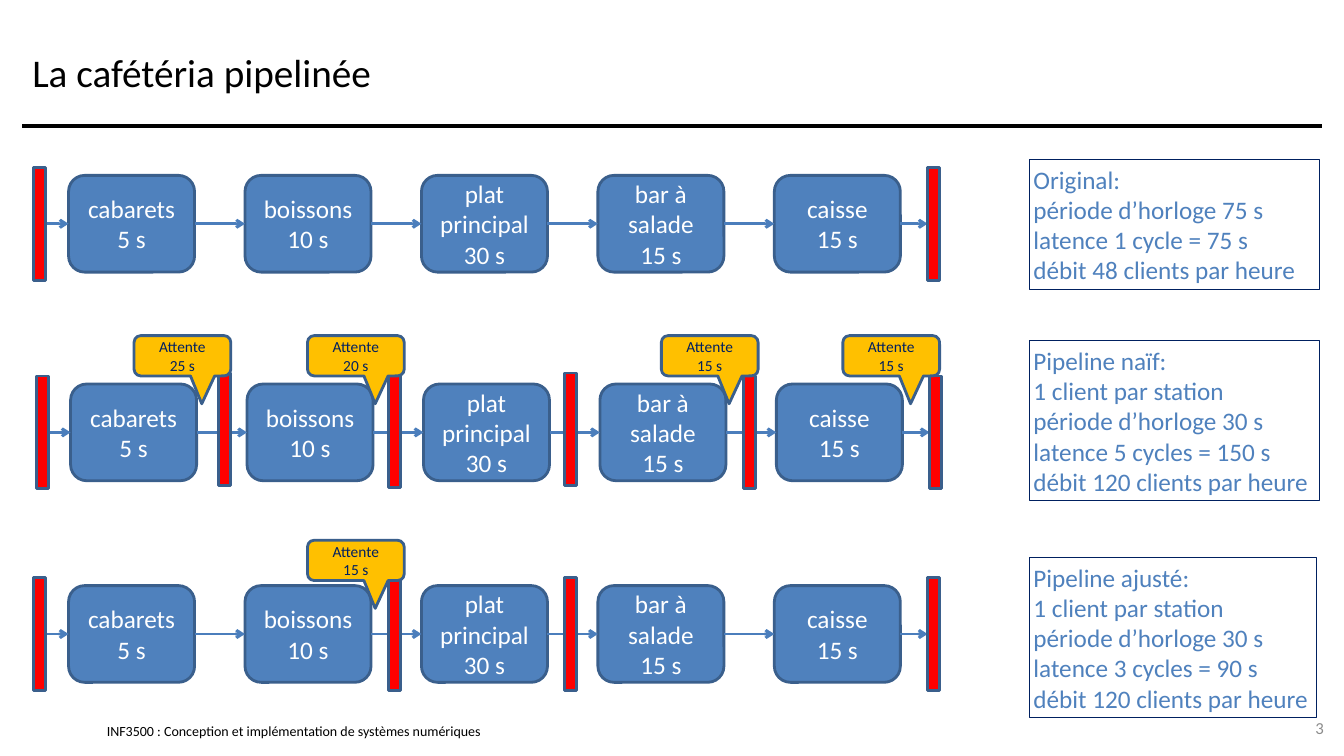
from dataclasses import dataclass

from lxml.etree import SubElement
from pptx import Presentation
from pptx.dml.color import RGBColor
from pptx.enum.shapes import MSO_CONNECTOR as Connector, MSO_SHAPE as Shape
from pptx.enum.text import MSO_ANCHOR as Anchor, PP_ALIGN as Align
from pptx.oxml.ns import qn
from pptx.util import Inches, Pt


@dataclass(frozen=True)
class Theme:
    font: str = "Calibri"
    black: str = "000000"
    white: str = "FFFFFF"
    blue: str = "4F81BD"
    outline: str = "3A5F8C"
    arrow: str = "4B7EBC"
    navy: str = "002060"
    red: str = "FF0000"
    amber: str = "FFC000"
    grey: str = "8C8C8C"
    title_size: int = 28
    body_size: int = 18
    number_size: int = 12
    wait_size: int = 11
    footer_size: int = 10
    line_width: float = 2


THEME = Theme()

STATIONS = [("cabarets", "5 s"), ("boissons", "10 s"), ("plat principal", "30 s"),
            ("bar à salade", "15 s"), ("caisse", "15 s")]
STATION_WIDTH, STATION_HEIGHT, STATION_PITCH = 1.25, 0.96, 1.75
REGISTER_WIDTH, REGISTER_HEIGHT = 0.12, 1.12
WAIT_WIDTH, WAIT_HEIGHT = 0.96, 0.4

# Registers (left, top) and waits (left, top, time) are offsets from the first station.
PIPELINES = [
    {"at": (0.68, 1.74),
     "registers": [(-0.35, -0.08), (8.52, -0.08)],
     "waits": [],
     "summary_at": (10.21, 1.58, 2.88, 1.29),
     "summary": ["Original:", "période d’horloge 75 s", "latence 1 cycle = 75 s",
                 "débit 48 clients par heure"]},
    {"at": (0.7, 3.81),
     "registers": [(-0.34, -0.08), (1.47, -0.11), (3.15, -0.09), (4.9, -0.11),
                   (6.67, -0.08), (8.52, -0.08)],
     "waits": [(0.63, -0.48, "25 s"), (2.35, -0.48, "20 s"), (5.86, -0.48, "15 s"),
               (7.66, -0.48, "15 s")],
     "summary_at": (10.21, 3.38, 2.88, 1.59),
     "summary": ["Pipeline naïf:", "1 client par station", "période d’horloge 30 s",
                 "latence 5 cycles = 150 s", "débit 120 clients par heure"]},
    {"at": (0.68, 5.81),
     "registers": [(-0.35, -0.08), (3.17, -0.08), (4.92, -0.08), (8.52, -0.08)],
     "waits": [(2.37, -0.45, "15 s")],
     "summary_at": (10.21, 5.53, 2.85, 1.59),
     "summary": ["Pipeline ajusté:", "1 client par station", "période d’horloge 30 s",
                 "latence 3 cycles = 90 s", "débit 120 clients par heure"]},
]


def write(shape, lines, size, color, align=Align.LEFT, inset=None):
    """Fill a shape with one paragraph per line, centred vertically."""
    frame = shape.text_frame
    frame.word_wrap = True
    frame.vertical_anchor = Anchor.MIDDLE
    if inset is not None:
        frame.margin_left = frame.margin_right = Inches(inset)
        frame.margin_top = frame.margin_bottom = Inches(inset)
    frame.text = "\n".join(lines)
    for paragraph in frame.paragraphs:
        paragraph.alignment = align
        paragraph.font.name = THEME.font
        paragraph.font.size = Pt(size)
        paragraph.font.color.rgb = RGBColor.from_string(color)


def add_box(slide, kind, box, fill=None, line=THEME.outline, width=THEME.line_width):
    shape = slide.shapes.add_shape(kind, *map(Inches, box))
    shape.shadow.inherit = False
    if fill:
        shape.fill.solid()
        shape.fill.fore_color.rgb = RGBColor.from_string(fill)
    else:
        shape.fill.background()
    shape.line.color.rgb = RGBColor.from_string(line)
    shape.line.width = Pt(width)
    return shape


def add_line(slide, start, end, y, color, width, arrow=False):
    """Draw a horizontal line, with an open arrowhead at its end if asked."""
    line = slide.shapes.add_connector(
        Connector.STRAIGHT, Inches(start), Inches(y), Inches(end), Inches(y))
    line.line.color.rgb = RGBColor.from_string(color)
    line.line.width = Pt(width)
    if arrow:
        SubElement(line.line._get_or_add_ln(), qn("a:tailEnd"), type="arrow")
    SubElement(line._element.spPr, qn("a:effectLst"))


def add_text(slide, box, text, size, color, align=Align.LEFT, inset=None):
    write(slide.shapes.add_textbox(*map(Inches, box)), [text], size, color, align, inset)


def add_frame(slide):
    """Place the title, its rule, the footer and the slide number."""
    add_text(slide, (1.06, 7.17, 5.11, 0.17),
             "INF3500 : Conception et implémentation de systèmes numériques",
             THEME.footer_size, THEME.black, inset=0)
    add_line(slide, 0.22, 13.11, 1.25, THEME.black, 3)
    title = slide.shapes.title
    title.left, title.top, title.width, title.height = map(Inches, (0.22, 0.17, 12.89, 1.08))
    write(title, ["La cafétéria pipelinée"], THEME.title_size, THEME.black)
    add_text(slide, (12.56, 7.02, 0.67, 0.4), "3", THEME.number_size, THEME.grey, Align.RIGHT)


def add_pipeline(slide, left, top, registers, waits):
    lefts = [left + i * STATION_PITCH for i in range(len(STATIONS))]
    for x, lines in zip(lefts, STATIONS):
        station = add_box(slide, Shape.ROUNDED_RECTANGLE,
                          (x, top, STATION_WIDTH, STATION_HEIGHT), THEME.blue)
        write(station, lines, THEME.body_size, THEME.white, Align.CENTER)

    starts = [left + registers[0][0] + REGISTER_WIDTH] + [x + STATION_WIDTH for x in lefts]
    ends = lefts + [left + registers[-1][0]]
    for start, end in zip(starts, ends):
        add_line(slide, start, end, top + STATION_HEIGHT / 2,
                 THEME.arrow, THEME.line_width, arrow=True)

    for dx, dy in registers:
        add_box(slide, Shape.RECTANGLE,
                (left + dx, top + dy, REGISTER_WIDTH, REGISTER_HEIGHT), THEME.red)

    for dx, dy, time in waits:
        wait = add_box(slide, Shape.ROUNDED_RECTANGULAR_CALLOUT,
                       (left + dx, top + dy, WAIT_WIDTH, WAIT_HEIGHT), THEME.amber)
        wait.adjustments[0], wait.adjustments[1] = 0.2, 1.19
        write(wait, ["Attente", time], THEME.wait_size, THEME.navy, Align.CENTER)


def add_summary(slide, box, lines):
    summary = add_box(slide, Shape.RECTANGLE, box, line=THEME.navy, width=0.75)
    write(summary, lines, THEME.body_size, THEME.blue, inset=0.04)


def main():
    presentation = Presentation()
    presentation.slide_width, presentation.slide_height = Inches(13.33), Inches(7.5)
    slide = presentation.slides.add_slide(presentation.slide_layouts.get_by_name("Title Only"))
    add_frame(slide)
    for pipeline in PIPELINES:
        add_pipeline(slide, *pipeline["at"], pipeline["registers"], pipeline["waits"])
        add_summary(slide, pipeline["summary_at"], pipeline["summary"])
    presentation.save("out.pptx")


if __name__ == "__main__":
    main()
